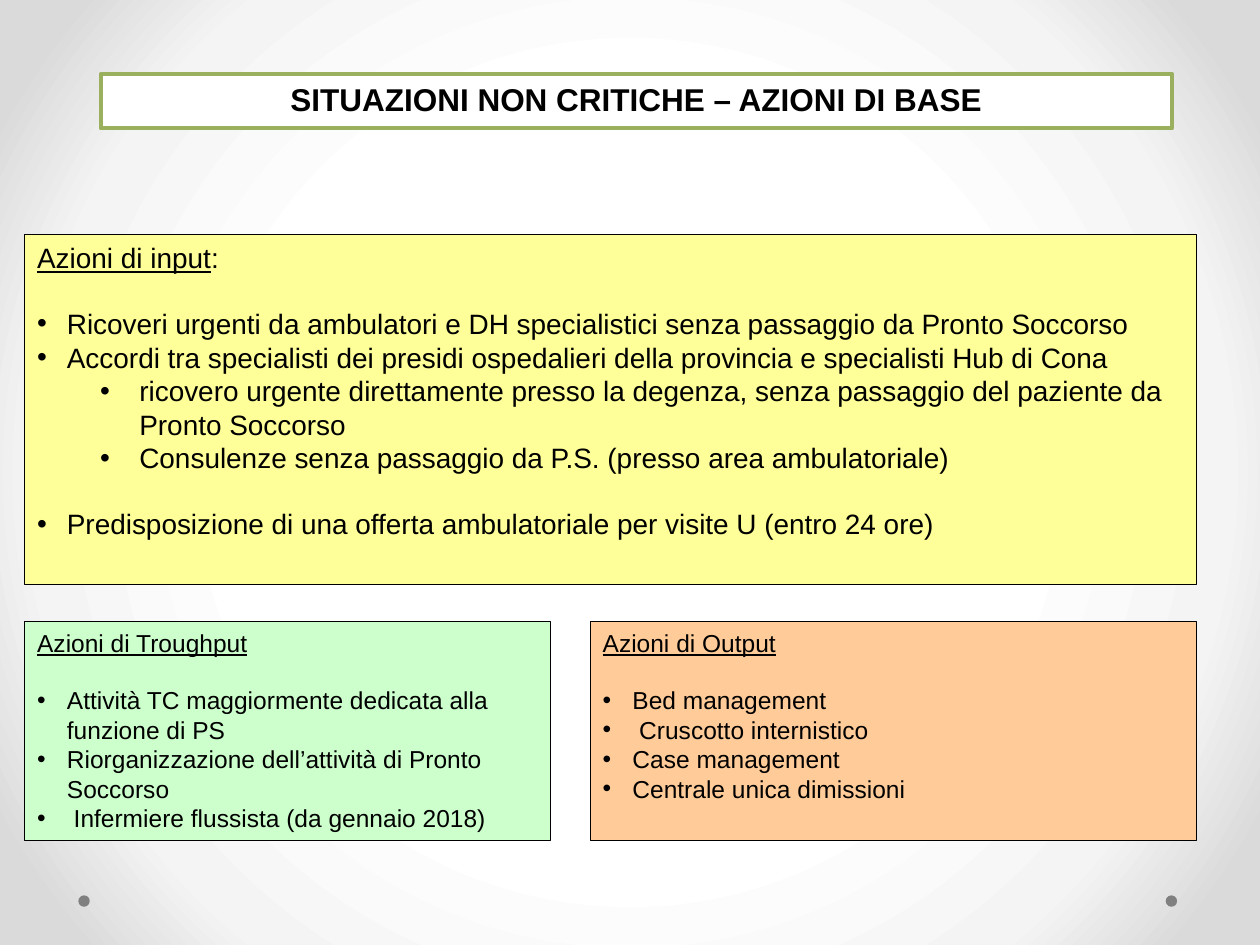
import pptx
import pptx.util
import pptx.dml.color
import pptx.enum.shapes
import pptx.enum.text
import pptx.oxml
import pptx.oxml.ns
from pptx.util import Cm, Pt

RGBColor = pptx.dml.color.RGBColor
BLACK = RGBColor(0x00, 0x00, 0x00)
WHITE = RGBColor(0xFF, 0xFF, 0xFF)
PALE_GREY = RGBColor(0xF4, 0xF4, 0xF4)
MID_GREY = RGBColor(0xDA, 0xDA, 0xDA)
DOT_GREY = RGBColor(0x80, 0x80, 0x80)
OLIVE = RGBColor(0x9B, 0xB0, 0x5E)
YELLOW = RGBColor(0xFF, 0xFF, 0x99)
GREEN = RGBColor(0xCC, 0xFF, 0xCC)
ORANGE = RGBColor(0xFF, 0xCC, 0x99)

FONT = "Arial"
LINE_HEIGHT = 1.15
BULLET_INDENTS = [(Cm(0.6), Cm(-0.6)), (Cm(2.06), Cm(-0.79))]

INPUT_ACTIONS = [
    (0, "Ricoveri urgenti da ambulatori e DH specialistici senza passaggio da Pronto Soccorso"),
    (0, "Accordi tra specialisti dei presidi ospedalieri della provincia e specialisti Hub di Cona"),
    (1, "ricovero urgente direttamente presso la degenza, senza passaggio del paziente da Pronto Soccorso"),
    (1, "Consulenze senza passaggio da P.S. (presso area ambulatoriale)"),
    (0, "Predisposizione di una offerta ambulatoriale per visite U (entro 24 ore)"),
]
THROUGHPUT_ACTIONS = [
    (0, "Attività TC maggiormente dedicata alla funzione di PS"),
    (0, "Riorganizzazione dell’attività di Pronto Soccorso"),
    (0, " Infermiere flussista (da gennaio 2018)"),
]
OUTPUT_ACTIONS = [
    (0, "Bed management"),
    (0, " Cruscotto internistico"),
    (0, "Case management"),
    (0, "Centrale unica dimissioni"),
]


def paint_background(slide):
    """Fill the slide with a radial gradient from white to grey."""
    fill = slide.background.fill
    fill.solid()
    solid = slide.background._cSld.bg.bgPr.find(pptx.oxml.ns.qn("a:solidFill"))
    stops = "".join(
        f'<a:gs pos="{percent * 1000}"><a:srgbClr val="{color}"/></a:gs>'
        for percent, color in [(50, WHITE), (76, PALE_GREY), (92, MID_GREY)]
    )
    gradient = pptx.oxml.parse_xml(
        f'<a:gradFill {pptx.oxml.ns.nsdecls("a")} rotWithShape="1"><a:gsLst>{stops}</a:gsLst>'
        '<a:path path="circle"><a:fillToRect l="50000" t="50000" r="50000" b="50000"/></a:path>'
        "</a:gradFill>"
    )
    solid.getparent().replace(solid, gradient)


def add_panel(slide, box, fill, line=None, line_width=0.75, kind="RECTANGLE"):
    """Add a flat shape in the given box and return it."""
    panel = slide.shapes.add_shape(getattr(pptx.enum.shapes.MSO_SHAPE, kind), *box)
    panel.shadow.inherit = False
    panel.fill.solid()
    panel.fill.fore_color.rgb = fill
    if line is None:
        panel.line.fill.background()
    else:
        panel.line.color.rgb = line
        panel.line.width = Pt(line_width)
    panel.text_frame.word_wrap = True
    panel.text_frame.vertical_anchor = pptx.enum.text.MSO_ANCHOR.TOP
    return panel


def add_text(paragraph, text, size=16, bold=False, underline=False, align="LEFT"):
    """Append a formatted run to a paragraph."""
    paragraph.alignment = getattr(pptx.enum.text.PP_ALIGN, align)
    run = paragraph.add_run()
    run.text = text
    font = run.font
    font.name, font.size, font.bold, font.underline = FONT, Pt(size), bold, underline
    font.color.rgb = BLACK


def set_bullet(paragraph, level):
    """Give a paragraph a round bullet and the hanging indent of its level."""
    paragraph.level = level
    margin, indent = BULLET_INDENTS[level]
    properties = paragraph._p.get_or_add_pPr()
    properties.set("marL", str(margin))
    properties.set("indent", str(indent))
    for tag in (f'buFont {pptx.oxml.ns.nsdecls("a")} typeface="{FONT}"',
                f'buChar {pptx.oxml.ns.nsdecls("a")} char="•"'):
        properties.append(pptx.oxml.parse_xml(f"<a:{tag}/>"))


def add_title(slide, box):
    """Place the framed slide title."""
    title = add_panel(slide, box, WHITE, OLIVE, 2.25)
    add_text(title.text_frame.paragraphs[0], "SITUAZIONI NON CRITICHE – AZIONI DI BASE",
             size=18, bold=True, align="CENTER")


def add_actions(slide, box, fill, heading, actions, size, suffix=""):
    """Place a coloured panel with an underlined heading and bulleted actions."""
    frame = add_panel(slide, box, fill, BLACK).text_frame
    add_text(frame.paragraphs[0], heading, size=size, underline=True)
    if suffix:
        add_text(frame.paragraphs[0], suffix, size=size)
    previous_level = None
    for level, action in actions:
        paragraph = frame.add_paragraph()
        add_text(paragraph, action, size=size)
        starts_group = previous_level is None or level < previous_level
        paragraph.space_before = Pt(size * LINE_HEIGHT if starts_group else 0)
        set_bullet(paragraph, level)
        previous_level = level


def add_footer_dots(slide, box):
    """Place a small dot at each end of the footer band."""
    left, top, width, diameter = box
    for x in (left, left + width - diameter):
        add_panel(slide, (x, top, diameter, diameter), DOT_GREY, kind="OVAL")


def main():
    """Build and save the slide."""
    deck = pptx.Presentation()
    deck.slide_width, deck.slide_height = Cm(25.4), Cm(19.05)
    slide = deck.slides.add_slide(deck.slide_layouts[6])
    left, right = Cm(0.5), Cm(24.12)
    lower_top, lower_height = Cm(12.53), Cm(4.42)
    output_left = Cm(11.9)

    paint_background(slide)
    add_footer_dots(slide, (Cm(1.58), Cm(18.05), Cm(22.15), Cm(0.23)))
    add_title(slide, (Cm(2.03), Cm(1.49), Cm(21.6), Cm(1.1)))
    add_actions(slide, (left, Cm(4.73), right - left, Cm(7.06)), YELLOW,
                "Azioni di input", INPUT_ACTIONS, 16, suffix=":")
    add_actions(slide, (left, lower_top, Cm(10.6), lower_height), GREEN,
                "Azioni di Troughput", THROUGHPUT_ACTIONS, 14)
    add_actions(slide, (output_left, lower_top, right - output_left, lower_height), ORANGE,
                "Azioni di Output", OUTPUT_ACTIONS, 14)
    deck.save("out.pptx")


if __name__ == "__main__":
    main()
